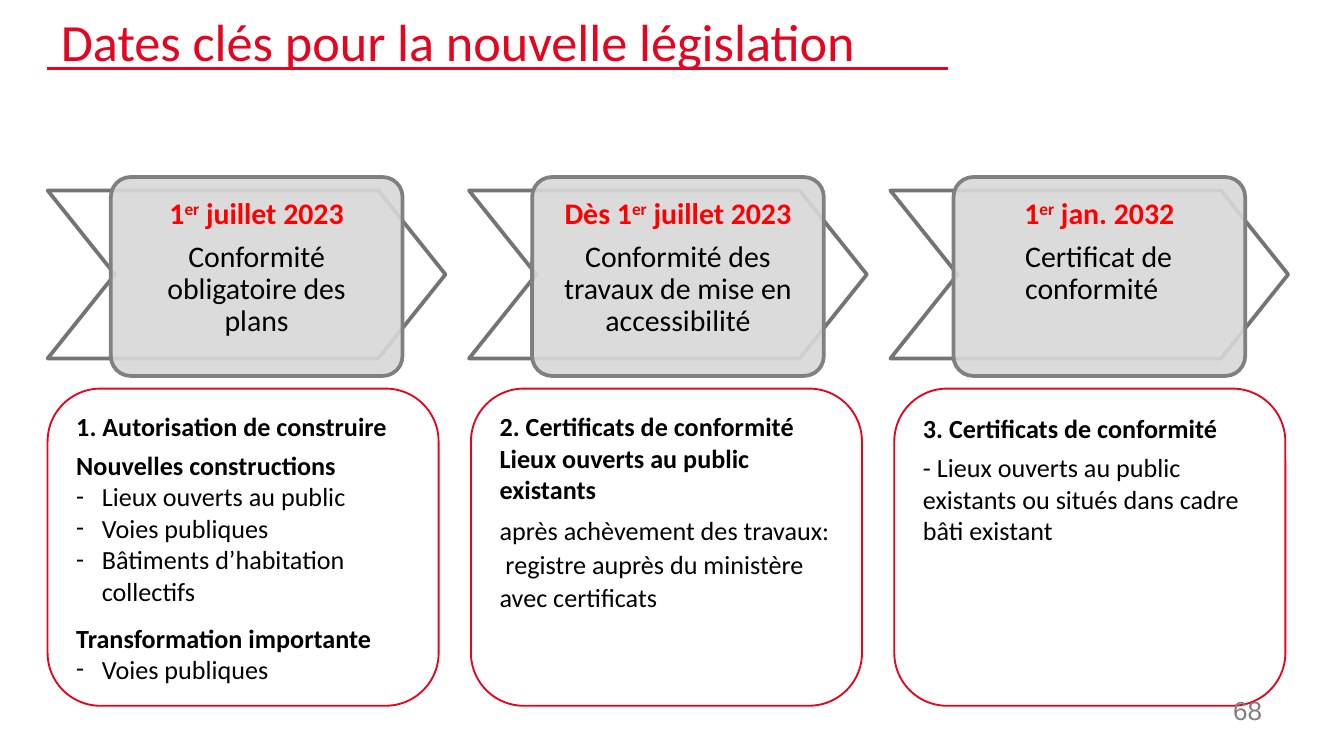
from dataclasses import dataclass
from lxml.etree import SubElement
from pptx import Presentation
from pptx.dml.color import RGBColor
from pptx.enum.shapes import MSO_CONNECTOR, MSO_SHAPE
from pptx.enum.text import MSO_ANCHOR, PP_ALIGN
from pptx.oxml.ns import qn
from pptx.util import Inches, Pt


@dataclass(frozen=True)
class Theme:
    red: str = "E40520"
    date: str = "FF0000"
    black: str = "000000"
    white: str = "FFFFFF"
    panel: str = "D8D8D8"
    edge: str = "808080"
    arrow: str = "747474"
    font: str = "Calibri"
    plain: str = "Arial"
    title: int = 28
    step: int = 16
    body: int = 14


T = Theme()
WIDE = Inches(10)
HIGH = WIDE * 9 // 16

STEPS = [
    (("1", "er", " juillet 2023"), "Conformité obligatoire des plans", 0),
    (("Dès 1", "er", " juillet 2023"),
     "Conformité des travaux de mise en accessibilité", 0),
    (("1", "er", " jan. 2032"), "Certificat de conformité", 0.37),
]

CARDS = [
    [("head", "1. Autorisation de construire", 1, 4),
     ("head", "Nouvelles constructions", 1, 0),
     ("dash", "Lieux ouverts au public", 1, 0),
     ("dash", "Voies publiques", 1, 0),
     ("dash", "Bâtiments d’habitation collectifs", 1, 0),
     ("head", "Transformation importante", 1.5, 0),
     ("dash", "Voies publiques", 1, 0)],
    [("head", "2. Certificats de conformité Lieux ouverts au public existants", 1, 4),
     ("text", "après achèvement des travaux:\v registre auprès du ministère "
              "avec certificats", 1.07, 8)],
    [("head", "3. Certificats de conformité", 1.07, 4),
     ("text", "- Lieux ouverts au public existants ou situés dans cadre "
              "bâti existant", 1, 0)],
]


def area(left, top, width, height):
    return (int(WIDE * left / 100), int(HIGH * top / 100),
            int(WIDE * width / 100), int(HIGH * height / 100))


def style(para, size, color, bold=False, font=T.font):
    for run in para.runs:
        run.font.size = Pt(size)
        run.font.name = font
        run.font.bold = bold
        run.font.color.rgb = RGBColor.from_string(color)


def space(para, align, lines, after):
    para.alignment = align
    para.line_spacing = lines
    para.space_after = Pt(after)


def indent(para, left, first=0):
    props = para._p.get_or_add_pPr()
    props.set("marL", str(Inches(left)))
    props.set("indent", str(Inches(first)))
    return props


def block(slide, kind, box, fill, edge, width, adjust=None):
    shape = slide.shapes.add_shape(kind, *area(*box))
    shape.shadow.inherit = False
    shape.fill.solid()
    shape.fill.fore_color.rgb = RGBColor.from_string(fill)
    shape.line.color.rgb = RGBColor.from_string(edge)
    shape.line.width = Pt(width)
    if adjust:
        shape.adjustments[0] = adjust
    shape.text_frame.word_wrap = True
    shape.text_frame.vertical_anchor = MSO_ANCHOR.TOP
    return shape


def fade(shape, share):
    tint = shape._element.spPr.find(qn("a:solidFill"))[0]
    SubElement(tint, qn("a:alpha")).set("val", str(share * 1000))


def add_title(slide):
    title = slide.shapes.title
    title.left, title.top, title.width, title.height = area(3.53, 1.78, 67.7, 7.29)
    frame = title.text_frame
    frame.text = "Dates clés pour la nouvelle législation"
    frame.vertical_anchor = MSO_ANCHOR.MIDDLE
    frame.paragraphs[0].alignment = PP_ALIGN.LEFT
    style(frame.paragraphs[0], T.title, T.red)
    left, top, width, _ = area(3.5, 9.07, 67, 0)
    rule = slide.shapes.add_connector(
        MSO_CONNECTOR.STRAIGHT, left + width, top, left, top)
    rule.line.color.rgb = RGBColor.from_string(T.red)
    rule.line.width = Pt(1.5)
    SubElement(rule._element.spPr, qn("a:effectLst"))


def add_step(slide, col, date, goal, inset):
    left = 3.55 + 31.35 * col
    block(slide, MSO_SHAPE.CHEVRON, (left, 25.2, 29.6, 22.22),
          T.white, T.arrow, 2, 0.4)
    panel = block(slide, MSO_SHAPE.ROUNDED_RECTANGLE,
                  (left + 4.7, 23.42, 21.7, 26.31), T.panel, T.edge, 2, 0.1)
    fade(panel, 90)
    frame = panel.text_frame
    frame.margin_left = frame.margin_right = Inches(0.12)
    frame.margin_top = frame.margin_bottom = Inches(0.12)
    head = frame.paragraphs[0]
    for part in date:
        head.add_run().text = part
    style(head, T.step, T.date, True)
    head.runs[1]._r.get_or_add_rPr().set("baseline", "30000")
    space(head, PP_ALIGN.CENTER, 0.9, 5.6)
    body = frame.add_paragraph()
    body.text = goal
    style(body, T.step, T.black)
    space(body, PP_ALIGN.LEFT if inset else PP_ALIGN.CENTER, 0.9, 5.6)
    if inset:
        indent(body, inset)


def add_card(slide, col, lines):
    card = block(slide, MSO_SHAPE.ROUNDED_RECTANGLE,
                 (3.54 + 31.5 * col, 51.4, 29.1, 41.96), T.white, T.red, 1)
    frame = card.text_frame
    for row, (kind, text, gap, after) in enumerate(lines):
        para = frame.add_paragraph() if row else frame.paragraphs[0]
        para.text = text
        if kind == "dash":
            props = indent(para, 0.19, -0.19)
            SubElement(props, qn("a:buFont")).set("typeface", T.font)
            SubElement(props, qn("a:buChar")).set("char", "-")
        space(para, PP_ALIGN.LEFT, gap, after)
        style(para, T.body, T.black, kind == "head")


def add_number(slide):
    frame = slide.shapes.add_textbox(*area(87.8, 91.02, 7.1, 7.29)).text_frame
    frame.word_wrap = True
    frame.text = "68"
    frame.paragraphs[0].alignment = PP_ALIGN.RIGHT
    style(frame.paragraphs[0], T.body, T.edge, font=T.plain)


def main():
    deck = Presentation()
    deck.slide_width, deck.slide_height = WIDE, HIGH
    slide = deck.slides.add_slide(deck.slide_layouts[5])
    add_title(slide)
    for col, step in enumerate(STEPS):
        add_step(slide, col, *step)
    for col, lines in enumerate(CARDS):
        add_card(slide, col, lines)
    add_number(slide)
    deck.save("out.pptx")


if __name__ == "__main__":
    main()
